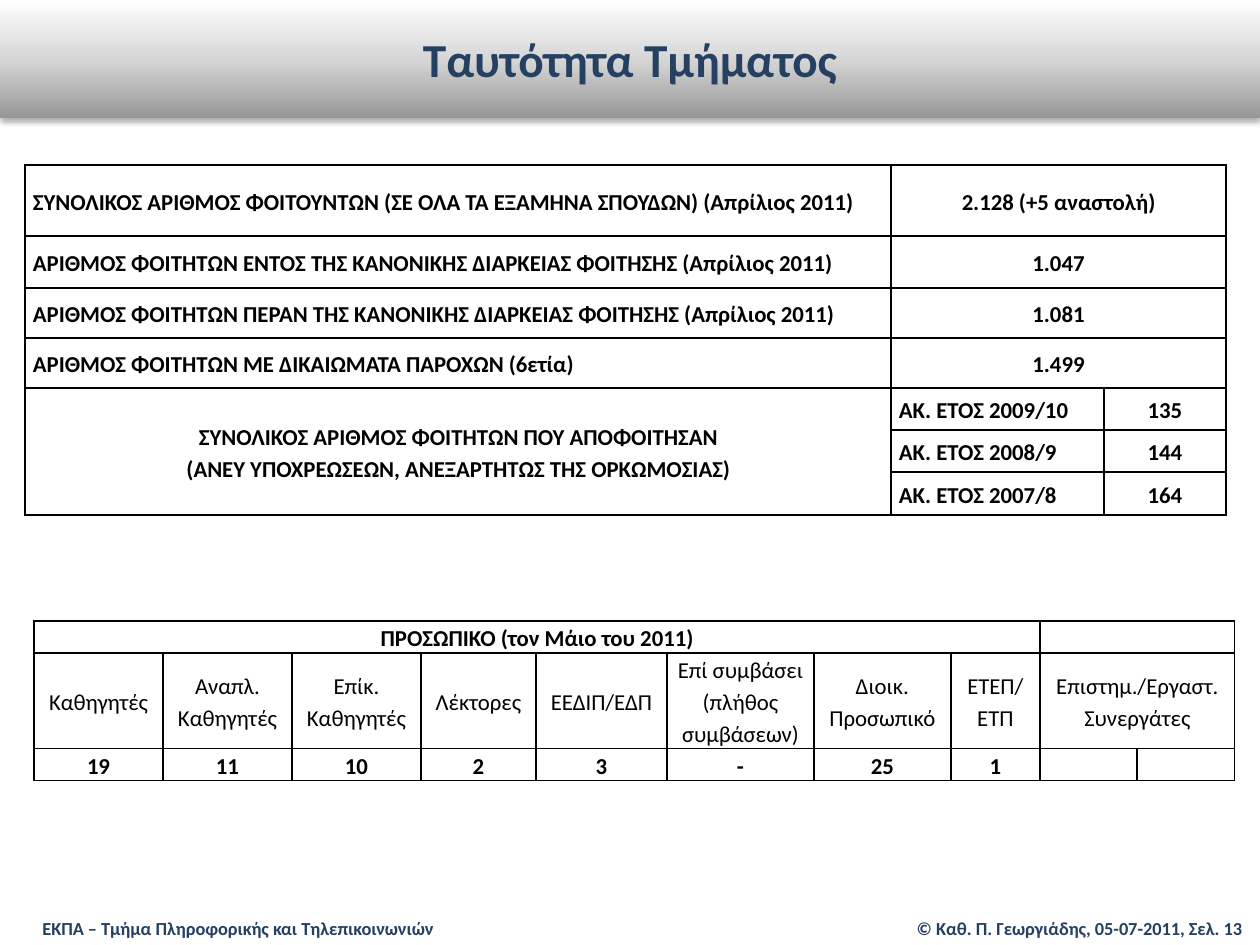
from dataclasses import dataclass

from lxml import etree
from pptx import Presentation
from pptx.dml.color import RGBColor
from pptx.enum.text import MSO_ANCHOR, MSO_AUTO_SIZE, PP_ALIGN
from pptx.oxml import parse_xml
from pptx.oxml.ns import nsdecls, qn
from pptx.util import Emu, Pt

LEFT, CENTER, RIGHT = PP_ALIGN.LEFT, PP_ALIGN.CENTER, PP_ALIGN.RIGHT
MIDDLE = MSO_ANCHOR.MIDDLE
NO_FIT = MSO_AUTO_SIZE.NONE
PX = 914400 // 126


@dataclass(frozen=True)
class Theme:
    font: str = "Calibri"
    navy: str = "254061"
    black: str = "000000"
    band_stops: tuple = ((0, "979797"), (50, "D7D7D7"), (100, "FFFFFF"))
    title_size: float = 27
    table_size: float = 13
    footer_size: float = 10.5
    border_width: float = 1


THEME = Theme()


def add_text(paragraph, text, size, color, align, bold=True):
    paragraph.alignment = align
    run = paragraph.add_run()
    run.text = text
    run.font.name = THEME.font
    run.font.size = Pt(size)
    run.font.bold = bold
    run.font.color.rgb = RGBColor.from_string(color)


def add_grid(left, top, widths, heights, merges, inset, cells):
    """Draw a ruled table; cells maps (row, column) to (text, alignment, bold)."""
    frame = slide.shapes.add_table(
        len(heights), len(widths), Emu(left * PX), Emu(top * PX),
        Emu(sum(widths) * PX), Emu(sum(heights) * PX))
    table = frame.table
    table.first_row = table.horz_banding = False
    for column, width in zip(table.columns, widths):
        column.width = Emu(width * PX)
    for row, height in zip(table.rows, heights):
        row.height = Emu(height * PX)
    for first, last in merges:
        table.cell(*first).merge(table.cell(*last))

    for r in range(len(heights)):
        for c in range(len(widths)):
            cell = table.cell(r, c)
            cell.margin_left = cell.margin_right = Emu(inset * PX)
            cell.margin_top = cell.margin_bottom = 0
            cell.vertical_anchor = MIDDLE
            for side in ("lnL", "lnR", "lnT", "lnB"):
                cell._tc.get_or_add_tcPr().append(parse_xml(
                    f'<a:{side} {nsdecls("a")} w="{Pt(THEME.border_width)}"><a:solidFill>'
                    f'<a:srgbClr val="{THEME.black}"/></a:solidFill></a:{side}>'))
            cell.fill.background()
            text, align, bold = cells.get((r, c), ("", CENTER, False))
            for i, line in enumerate(text.split("\n")):
                paragraphs = cell.text_frame.paragraphs
                paragraph = cell.text_frame.add_paragraph() if i else paragraphs[0]
                paragraph.line_spacing = 1.15
                if line:
                    add_text(paragraph, line, THEME.table_size, THEME.black, align, bold)
                else:
                    etree.SubElement(paragraph._p, qn("a:endParaRPr"),
                                     sz=str(THEME.table_size * 100))


prs = Presentation()
prs.slide_width, prs.slide_height = Emu(1260 * PX), Emu(945 * PX)
slide = prs.slides.add_slide(prs.slide_layouts.get_by_name("Title Only"))

# Title band
title = slide.shapes.title
title.left, title.top = 0, Emu(-1 * PX)
title.width, title.height = prs.slide_width, Emu(119 * PX)
title.text_frame.auto_size = NO_FIT
title.text_frame.vertical_anchor = MIDDLE
add_text(title.text_frame.paragraphs[0], "Ταυτότητα Τμήματος",
         THEME.title_size, THEME.navy, CENTER)
stops = "".join(f'<a:gs pos="{pos * 1000}"><a:srgbClr val="{color}"/></a:gs>'
                for pos, color in THEME.band_stops)
band = title._element.spPr
band.append(parse_xml(f'<a:prstGeom {nsdecls("a")} prst="rect"><a:avLst/></a:prstGeom>'))
band.append(parse_xml(
    f'<a:gradFill {nsdecls("a")}><a:gsLst>{stops}</a:gsLst>'
    '<a:lin ang="16200000" scaled="0"/></a:gradFill>'))
title.line.fill.background()
band.append(parse_xml(
    f'<a:effectLst {nsdecls("a")}><a:outerShdw blurRad="{Pt(3.5)}" dist="{Pt(2.2)}" '
    f'dir="5400000" rotWithShape="0"><a:srgbClr val="{THEME.black}">'
    '<a:alpha val="32000"/></a:srgbClr></a:outerShdw></a:effectLst>'))

# Student numbers
student_counts = [
    ("ΣΥΝΟΛΙΚΟΣ ΑΡΙΘΜΟΣ ΦΟΙΤΟΥΝΤΩΝ (ΣΕ ΟΛΑ ΤΑ ΕΞΑΜΗΝΑ ΣΠΟΥΔΩΝ) (Απρίλιος 2011)",
     "2.128 (+5 αναστολή)"),
    ("ΑΡΙΘΜΟΣ ΦΟΙΤΗΤΩΝ ΕΝΤΟΣ ΤΗΣ ΚΑΝΟΝΙΚΗΣ ΔΙΑΡΚΕΙΑΣ ΦΟΙΤΗΣΗΣ (Απρίλιος 2011)", "1.047"),
    ("ΑΡΙΘΜΟΣ ΦΟΙΤΗΤΩΝ ΠΕΡΑΝ ΤΗΣ ΚΑΝΟΝΙΚΗΣ ΔΙΑΡΚΕΙΑΣ ΦΟΙΤΗΣΗΣ (Απρίλιος 2011)", "1.081"),
    ("ΑΡΙΘΜΟΣ ΦΟΙΤΗΤΩΝ ΜΕ ΔΙΚΑΙΩΜΑΤΑ ΠΑΡΟΧΩΝ (6ετία)", "1.499"),
]
graduates = [("2009/10", "135"), ("2008/9", "144"), ("2007/8", "164")]
student_cells = {(4, 0): ("ΣΥΝΟΛΙΚΟΣ ΑΡΙΘΜΟΣ ΦΟΙΤΗΤΩΝ ΠΟΥ ΑΠΟΦΟΙΤΗΣΑΝ\n"
                          "(ΑΝΕΥ ΥΠΟΧΡΕΩΣΕΩΝ, ΑΝΕΞΑΡΤΗΤΩΣ ΤΗΣ ΟΡΚΩΜΟΣΙΑΣ)", CENTER, True)}
for r, (label, count) in enumerate(student_counts):
    student_cells[r, 0] = (label, LEFT, True)
    student_cells[r, 1] = (count, CENTER, True)
for r, (year, count) in enumerate(graduates, start=len(student_counts)):
    student_cells[r, 1] = (f"ΑΚ. ΕΤΟΣ {year}", LEFT, True)
    student_cells[r, 2] = (count, CENTER, True)
student_merges = [((r, 1), (r, 2)) for r in range(len(student_counts))]
student_merges.append(((4, 0), (6, 0)))
add_grid(25, 165, [866, 213, 122], [71, 52, 50, 50, 42, 42, 43],
         student_merges, 8, student_cells)

# Staff numbers
staff = [
    ("Καθηγητές", "19"),
    ("Αναπλ. Καθηγητές", "11"),
    ("Επίκ. Καθηγητές", "10"),
    ("Λέκτορες", "2"),
    ("ΕΕΔΙΠ/ΕΔΠ", "3"),
    ("Επί συμβάσει\n(πλήθος συμβάσεων)", "-"),
    ("Διοικ. Προσωπικό", "25"),
    ("ΕΤΕΠ/ΕΤΠ", "1"),
    ("Επιστημ./Εργαστ. Συνεργάτες", ""),
]
staff_cells = {(0, 0): ("ΠΡΟΣΩΠΙΚΟ (τον Μάιο του 2011)", CENTER, True)}
for c, (role, count) in enumerate(staff):
    staff_cells[1, c] = (role, CENTER, False)
    staff_cells[2, c] = (count, CENTER, True)
add_grid(34, 621, [129, 129, 129, 115, 131, 147, 137, 89, 97, 98], [32, 94, 32],
         [((0, 0), (0, 7)), ((0, 8), (0, 9)), ((1, 8), (1, 9))], 9, staff_cells)

# Footer
for left, width, text, align in [
    (30, 461, "ΕΚΠΑ – Τμήμα Πληροφορικής και Τηλεπικοινωνιών", LEFT),
    (897, 358, "© Καθ. Π. Γεωργιάδης, 05-07-2011, Σελ. 13", RIGHT),
]:
    footer = slide.shapes.add_textbox(Emu(left * PX), Emu(911 * PX),
                                      Emu(width * PX), Emu(35 * PX))
    footer.text_frame.word_wrap = True
    add_text(footer.text_frame.paragraphs[0], text, THEME.footer_size, THEME.navy, align)

prs.save("out.pptx")
